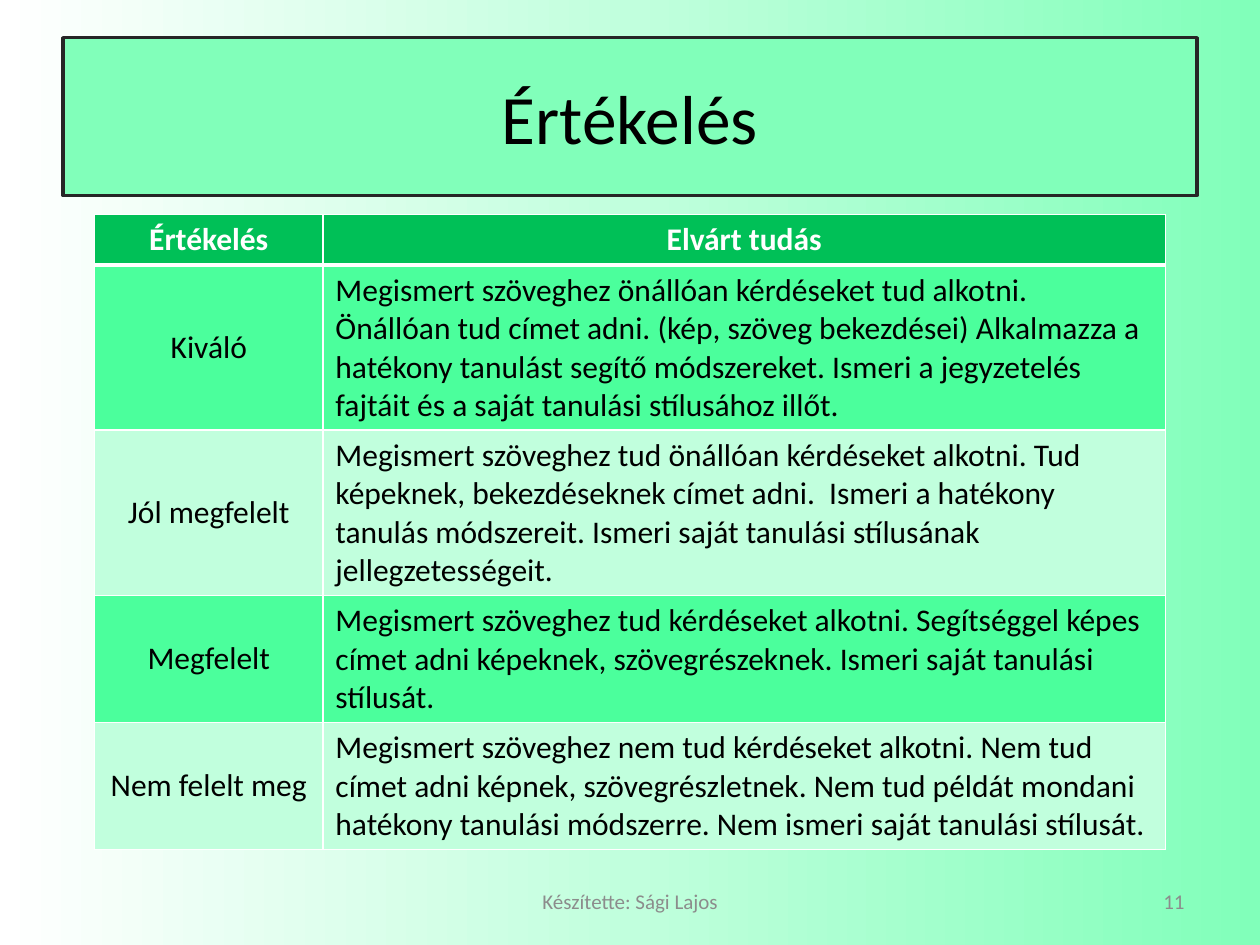
from copy import deepcopy
from dataclasses import dataclass
from typing import Any

from lxml import etree
from pptx import Presentation
from pptx.dml.color import RGBColor
from pptx.enum.shapes import MSO_SHAPE
from pptx.enum.text import MSO_ANCHOR, PP_ALIGN
from pptx.oxml.ns import qn
from pptx.util import Cm, Pt

RECTANGLE = MSO_SHAPE.RECTANGLE
TOP, MIDDLE = MSO_ANCHOR.TOP, MSO_ANCHOR.MIDDLE
LEFT, CENTER, RIGHT = PP_ALIGN.LEFT, PP_ALIGN.CENTER, PP_ALIGN.RIGHT


@dataclass(frozen=True)
class Theme:
    font: str = "Calibri"
    title_size: float = 39.6
    table_size: float = 18
    footer_size: float = 12
    black: str = "000000"
    white: str = "FFFFFF"
    grey: str = "8C8C8C"
    frame: str = "262626"
    title_fill: str = "81FFBA"
    header_fill: str = "00C057"
    bands: tuple[str, str] = ("4BFF9C", "C1FFDD")
    background: tuple[str, ...] = ("FFFFFF", "C1FFDD", "81FFBA")
    thin: float = 1
    thick: float = 3


@dataclass(frozen=True)
class Grade:
    name: str
    knowledge: str
    lines: int


@dataclass(frozen=True)
class Footer:
    text: str
    left: float
    width: float
    align: Any


THEME = Theme()
HEADER = Grade("Értékelés", "Elvárt tudás", 1)
GRADES = [
    Grade("Kiváló", "Megismert szöveghez önállóan kérdéseket tud alkotni.  Önállóan tud címet adni. "
          "(kép, szöveg bekezdései) Alkalmazza a hatékony tanulást segítő módszereket. "
          "Ismeri a jegyzetelés fajtáit és a saját tanulási stílusához illőt.", 4),
    Grade("Jól megfelelt", "Megismert szöveghez tud önállóan kérdéseket alkotni. Tud képeknek, "
          "bekezdéseknek címet adni.  Ismeri a hatékony tanulás módszereit. "
          "Ismeri saját tanulási stílusának jellegzetességeit.", 4),
    Grade("Megfelelt", "Megismert szöveghez tud kérdéseket alkotni. Segítséggel képes címet adni "
          "képeknek, szövegrészeknek. Ismeri saját tanulási stílusát.", 3),
    Grade("Nem felelt meg", "Megismert szöveghez nem tud kérdéseket alkotni. Nem tud címet adni "
          "képnek, szövegrészletnek. Nem tud példát mondani hatékony tanulási módszerre. "
          "Nem ismeri saját tanulási stílusát.", 3),
]
FOOTERS = [
    Footer("Készítette: Sági Lajos", 8.68, 8.05, CENTER),
    Footer("11", 18.2, 5.93, RIGHT),
]
COLUMN_WIDTHS = (4.6, 16.99)
LINE_HEIGHT, ROW_PADDING = 0.77, 0.25


def write(frame: Any, text: str, size: float, color: str, align: Any, bold: bool = False) -> None:
    paragraph = frame.paragraphs[0]
    paragraph.alignment = align
    run = paragraph.add_run()
    run.text = text
    for attribute, value in {"name": THEME.font, "size": Pt(size), "bold": bold}.items():
        setattr(run.font, attribute, value)
    run.font.color.rgb = RGBColor.from_string(color)


def paint_background(slide: Any) -> None:
    fill = slide.background.fill
    fill.gradient()
    fill.gradient_angle = 0
    stop_list = next(slide.element.iter(qn("a:gsLst")))
    stop_list.append(deepcopy(stop_list[-1]))
    last = len(THEME.background) - 1
    for index, (stop, color) in enumerate(zip(fill.gradient_stops, THEME.background)):
        stop.position = index / last
        stop.color.rgb = RGBColor.from_string(color)


def add_title(slide: Any, text: str) -> None:
    banner = slide.shapes.add_shape(RECTANGLE, Cm(1.27), Cm(0.76), Cm(22.86), Cm(3.18))
    banner.shadow.inherit = False
    banner.fill.solid()
    banner.fill.fore_color.rgb = RGBColor.from_string(THEME.title_fill)
    banner.line.color.rgb = RGBColor.from_string(THEME.frame)
    banner.line.width = Pt(2)
    banner.text_frame.vertical_anchor = MIDDLE
    write(banner.text_frame, text, THEME.title_size, THEME.black, CENTER)


def add_footer(slide: Any, footer: Footer) -> None:
    box = slide.shapes.add_textbox(Cm(footer.left), Cm(17.65), Cm(footer.width), Cm(1.02))
    for attribute, value in {"word_wrap": True, "vertical_anchor": MIDDLE}.items():
        setattr(box.text_frame, attribute, value)
    write(box.text_frame, footer.text, THEME.footer_size, THEME.grey, footer.align)


def set_borders(cell: Any, top: float, bottom: float) -> None:
    properties = cell._tc.get_or_add_tcPr()
    widths = {"a:lnL": THEME.thin, "a:lnR": THEME.thin, "a:lnT": top, "a:lnB": bottom}
    for index, (side, width) in enumerate(widths.items()):
        border = etree.Element(qn(side), w=str(Pt(width)))
        solid = etree.SubElement(border, qn("a:solidFill"))
        etree.SubElement(solid, qn("a:srgbClr"), val=THEME.white)
        properties.insert(index, border)


def add_grade_table(slide: Any) -> None:
    rows = [HEADER, *GRADES]
    heights = [Cm(ROW_PADDING + LINE_HEIGHT * grade.lines) for grade in rows]
    table = slide.shapes.add_table(
        len(rows), len(COLUMN_WIDTHS), Cm(1.91), Cm(4.32), Cm(sum(COLUMN_WIDTHS)), sum(heights)
    ).table
    for column, width in zip(table.columns, COLUMN_WIDTHS):
        column.width = Cm(width)
    for index, (grade, height) in enumerate(zip(rows, heights)):
        table.rows[index].height = height
        is_header = index == 0
        fill = THEME.header_fill if is_header else THEME.bands[(index - 1) % 2]
        color = THEME.white if is_header else THEME.black
        top = THEME.thick if index == 1 else THEME.thin
        bottom = THEME.thick if is_header else THEME.thin
        for column, text in enumerate((grade.name, grade.knowledge)):
            cell = table.cell(index, column)
            is_label = column == 0
            cell.vertical_anchor = MIDDLE if is_label and not is_header else TOP
            cell.fill.solid()
            cell.fill.fore_color.rgb = RGBColor.from_string(fill)
            set_borders(cell, top, bottom)
            align = CENTER if is_header or is_label else LEFT
            write(cell.text_frame, text, THEME.table_size, color, align, is_header)


def main() -> None:
    presentation = Presentation()
    presentation.slide_width, presentation.slide_height = Cm(25.4), Cm(19.05)
    slide = presentation.slides.add_slide(presentation.slide_layouts[6])
    paint_background(slide)
    add_title(slide, "Értékelés")
    for footer in FOOTERS:
        add_footer(slide, footer)
    add_grade_table(slide)
    presentation.save("out.pptx")


if __name__ == "__main__":
    main()
